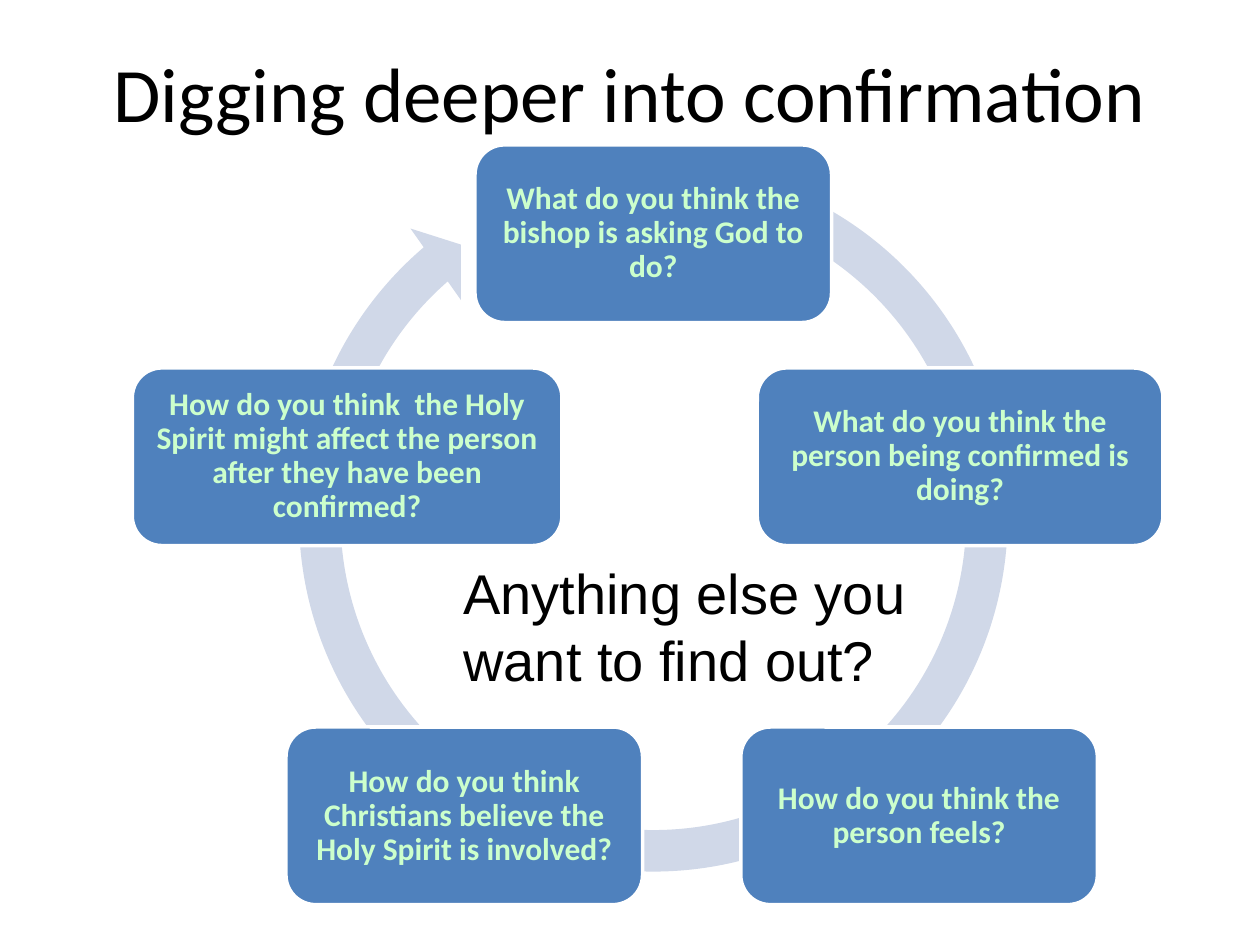
from pptx import Presentation
from pptx.dml.color import RGBColor
from pptx.enum.shapes import MSO_SHAPE
from pptx.enum.text import MSO_ANCHOR, PP_ALIGN
from pptx.util import Inches, Pt

ROUND_RECT = MSO_SHAPE.ROUNDED_RECTANGLE
CIRCULAR_ARROW = MSO_SHAPE.CIRCULAR_ARROW
MIDDLE, TOP = MSO_ANCHOR.MIDDLE, MSO_ANCHOR.TOP
CENTER, LEFT = PP_ALIGN.CENTER, PP_ALIGN.LEFT

BLACK = RGBColor(0x00, 0x00, 0x00)
WHITE = RGBColor(0xFF, 0xFF, 0xFF)
BLUE = RGBColor(0x4F, 0x81, 0xBD)
PALE_BLUE = RGBColor(0xD0, 0xD8, 0xE8)
PALE_GREEN = RGBColor(0xCC, 0xFF, 0xCC)

TITLE_FONT = {"name": "Calibri", "size": Pt(44), "bold": False}
BOX_FONT = {"name": "Calibri", "size": Pt(18), "bold": True}
PROMPT_FONT = {"name": "Arial", "size": Pt(32), "bold": False}


def write(shape, text, font, color, align, anchor):
    tf = shape.text_frame
    tf.word_wrap = True
    tf.vertical_anchor = anchor
    p = tf.paragraphs[0]
    p.alignment = align
    r = p.add_run()
    r.text = text
    for key, value in font.items():
        setattr(r.font, key, value)
    r.font.color.rgb = color
    return tf


prs = Presentation()
prs.slide_width, prs.slide_height = Inches(10), Inches(7.5)
s = prs.slides.add_slide(prs.slide_layouts[6])

# Title
title = s.shapes.add_textbox(Inches(0.5), Inches(0.3), Inches(9), Inches(0.85))
write(title, "Digging deeper into confirmation", TITLE_FONT, BLACK, CENTER, MIDDLE)

# Cycle arrow; angle adjustments are in units of 1/0.6 degree
arrow = s.shapes.add_shape(CIRCULAR_ARROW, Inches(2.19), Inches(1.11),
                           Inches(5.99), Inches(5.99))
arrow.shadow.inherit = False
arrow.fill.solid()
arrow.fill.fore_color.rgb = PALE_BLUE
arrow.line.fill.background()
head_angle, end_angle, start_angle = 5.51, 229.29, 289.96
adjustments = [5.5 / 100, head_angle * 0.6, end_angle * 0.6, start_angle * 0.6, 5.8 / 100]
for i, value in enumerate(adjustments):
    arrow.adjustments[i] = value

# Question boxes, clockwise from the top: left, top, width, text
BOX_HEIGHT = 1.41
TOP_ROW, MIDDLE_ROW, BOTTOM_ROW = 1.15, 2.92, 5.77
questions = [
    (3.77, TOP_ROW, 2.83, "What do you think the bishop is asking God to do?"),
    (6.01, MIDDLE_ROW, 3.22, "What do you think the person being confirmed is doing?"),
    (5.88, BOTTOM_ROW, 2.83, "How do you think the person feels?"),
    (2.27, BOTTOM_ROW, 2.83,
     "How do you think Christians believe the Holy Spirit is involved?"),
    (1.05, MIDDLE_ROW, 3.41,
     "How do you think  the Holy Spirit might affect the person after they have been confirmed?"),
]
for left, top, width, text in questions:
    box = s.shapes.add_shape(ROUND_RECT, Inches(left), Inches(top),
                             Inches(width), Inches(BOX_HEIGHT))
    box.shadow.inherit = False
    box.fill.solid()
    box.fill.fore_color.rgb = BLUE
    box.line.color.rgb = WHITE
    box.line.width = Pt(2)
    tf = write(box, text, BOX_FONT, PALE_GREEN, CENTER, MIDDLE)
    tf.paragraphs[0].line_spacing = 0.9
    for side in ("left", "top", "right", "bottom"):
        setattr(tf, f"margin_{side}", Inches(0.07))

# Closing prompt inside the cycle
prompt = s.shapes.add_textbox(Inches(3.58), Inches(4.38), Inches(3.86), Inches(1.18))
write(prompt, "Anything else you want to find out?", PROMPT_FONT, BLACK, LEFT, TOP)

prs.save("out.pptx")
